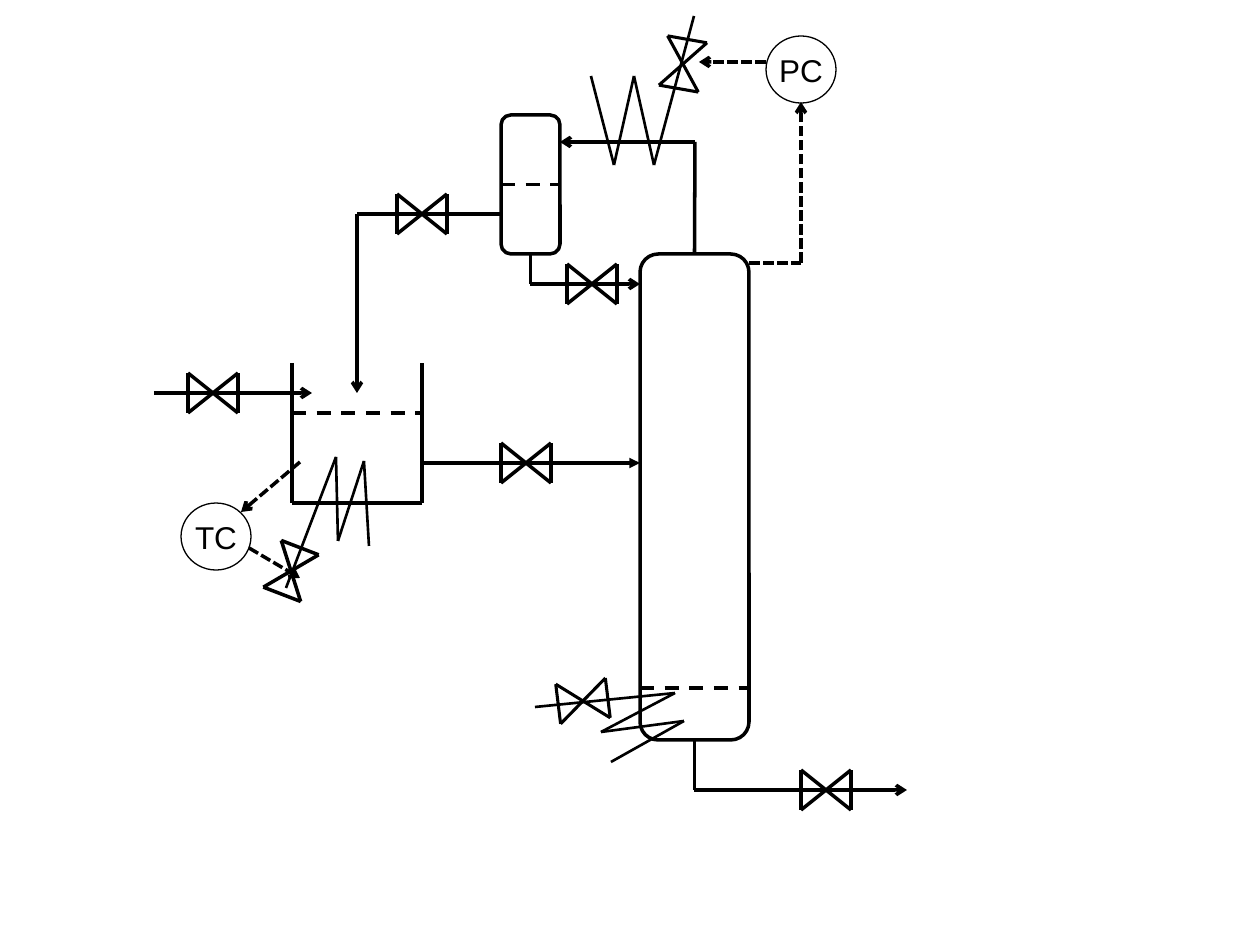
from itertools import pairwise
from math import cos, radians, sin

from lxml.etree import SubElement
from pptx import Presentation
from pptx.dml.color import RGBColor
from pptx.enum.dml import MSO_LINE_DASH_STYLE as Dash
from pptx.enum.shapes import MSO_CONNECTOR as Connector, MSO_SHAPE as Shape
from pptx.enum.text import MSO_ANCHOR as Anchor, PP_ALIGN as Align
from pptx.oxml.ns import qn
from pptx.util import Pt

PX = 914400 / 126
INK = "000000"
TOP, LEFT, BOTTOM, RIGHT = range(4)


def emu(pixels):
    """Turn pixels into EMU."""
    return round(pixels * PX)


def color(hex_string):
    """Turn a hex string into a colour."""
    return RGBColor.from_string(hex_string)


def route(shapes, box, points, width=2, dash=None, arrow=None):
    """Draw a chain of straight lines, with an optional arrow at its end."""
    left, top = box[:2]
    lines = []
    for (x1, y1), (x2, y2) in pairwise(points):
        line = shapes.add_connector(
            Connector.STRAIGHT,
            emu(left + x1), emu(top + y1), emu(left + x2), emu(top + y2))
        line.line.color.rgb = color(INK)
        line.line.width = Pt(width)
        if dash:
            line.line.dash_style = dash
        SubElement(line._element.spPr, qn("a:effectLst"))
        lines.append(line)
    if arrow:
        outline = lines[-1].line._get_or_add_ln()
        SubElement(outline, qn("a:tailEnd"), type=arrow)
    return lines


def coil(slide, box, points):
    """Draw a zigzag heat exchanger coil as one group."""
    route(slide.shapes.add_group_shape().shapes, box, points, width=1.5)


def valve(slide, box, center, angle=0, width=2):
    """Draw a bow-tie valve around a centre, turned by an angle in degrees."""
    turn = radians(angle)
    corners = [
        (center[0] + x * cos(turn) - y * sin(turn),
         center[1] + x * sin(turn) + y * cos(turn))
        for x, y in ((-25, -20), (-25, 20), (25, -20), (25, 20))]
    top_left, bottom_left, top_right, bottom_right = corners
    route(slide.shapes.add_group_shape().shapes, box,
          [top_right, bottom_left, top_left, bottom_right, top_right], width)


def outlined(slide, kind, box, width):
    """Draw an unfilled preset shape with a black outline."""
    shape = slide.shapes.add_shape(kind, *map(emu, box))
    shape.shadow.inherit = False
    shape.fill.background()
    shape.line.color.rgb = color(INK)
    shape.line.width = Pt(width)
    return shape


def column(slide, box):
    """Draw the column with its reboiler and bottoms outlet."""
    width, height = box[2:]
    middle, outlet = width / 2, height + 50
    vessel = outlined(slide, Shape.ROUNDED_RECTANGLE, box, 2)
    route(slide.shapes, box, [(0, 434), (width, 434)], dash=Dash.DASH)
    bottoms = route(slide.shapes, box,
                    [(middle, height), (middle, outlet), (267, outlet)], arrow="arrow")
    bottoms[0].begin_connect(vessel, BOTTOM)
    valve(slide, box, (186, outlet))
    coil(slide, box, [(-29, 508), (44, 467), (-39, 478), (35, 439), (-105, 453)])
    valve(slide, box, (-57, 447), -7, 1.75)
    return vessel


def reflux_drum(slide, box, tower):
    """Draw the drum with its condenser, reflux and recycle lines."""
    width, height = box[2:]
    middle, reflux, recycle = width / 2, height + 30, 99
    vessel = outlined(slide, Shape.ROUNDED_RECTANGLE, box, 2)
    level = route(slide.shapes, box,
                  [(0, height / 2), (width, height / 2)], dash=Dash.DASH)[0]
    level.begin_connect(vessel, LEFT)
    level.end_connect(vessel, RIGHT)

    overhead = route(slide.shapes, box,
                     [(194, height), (194, 27), (width, 27)], arrow="arrow")
    overhead[0].begin_connect(tower, TOP)
    coil(slide, box, [(90, -39), (113, 50), (133, -39), (153, 50), (193, -99)])
    valve(slide, box, (182, -51), -80, 1.75)

    return_line = route(slide.shapes, box,
                        [(middle, height), (middle, reflux), (139, reflux)], arrow="arrow")
    return_line[0].begin_connect(vessel, BOTTOM)
    valve(slide, box, (91, reflux))

    route(slide.shapes, box, [(0, recycle), (-144, recycle), (-144, 278)], arrow="arrow")
    valve(slide, box, (-79, recycle))


def feed_tank(slide, box):
    """Draw the open heated tank with its inlet and outlet."""
    width, height = box[2:]
    route(slide.shapes, box, [(0, 0), (0, height), (width, height), (width, 0)])
    route(slide.shapes, box, [(0, 50), (width, 50)], dash=Dash.DASH)
    route(slide.shapes, box, [(-138, 30), (20, 30)], arrow="arrow")
    valve(slide, box, (-79, 30))
    route(slide.shapes, box, [(width, 100), (348, 100)], arrow="triangle")
    valve(slide, box, (234, 100))
    coil(slide, box, [(77, 183), (72, 98), (46, 178), (44, 94), (-6, 225)])
    valve(slide, box, (-1, 208), -69)


def controller(slide, box, label, signals):
    """Draw a labelled controller circle with its dashed signal lines."""
    circle = outlined(slide, Shape.OVAL, box, 0.75)
    frame = circle.text_frame
    frame.text = label
    frame.word_wrap = False
    frame.vertical_anchor = Anchor.MIDDLE
    paragraph = frame.paragraphs[0]
    paragraph.alignment = Align.CENTER
    font = paragraph.runs[0].font
    font.name, font.size = "Arial", Pt(18)
    font.color.rgb = color(INK)
    for points in signals:
        route(slide.shapes, box, points, dash=Dash.SQUARE_DOT, arrow="arrow")


def main():
    """Build the process diagram slide."""
    presentation = Presentation()
    presentation.slide_width, presentation.slide_height = emu(1260), emu(945)
    slide = presentation.slides.add_slide(presentation.slide_layouts[6])
    tower = column(slide, (640, 254, 109, 486))
    reflux_drum(slide, (501, 115, 59, 139), tower)
    feed_tank(slide, (292, 363, 130, 140))
    controller(slide, (766, 36, 70, 67), "PC",
               [[(0, 26), (-67, 26)], [(-17, 227), (35, 227), (35, 66)]])
    controller(slide, (181, 503, 70, 67), "TC",
               [[(119, -41), (60, 9)], [(68, 45), (119, 75)]])
    presentation.save("out.pptx")


if __name__ == "__main__":
    main()
